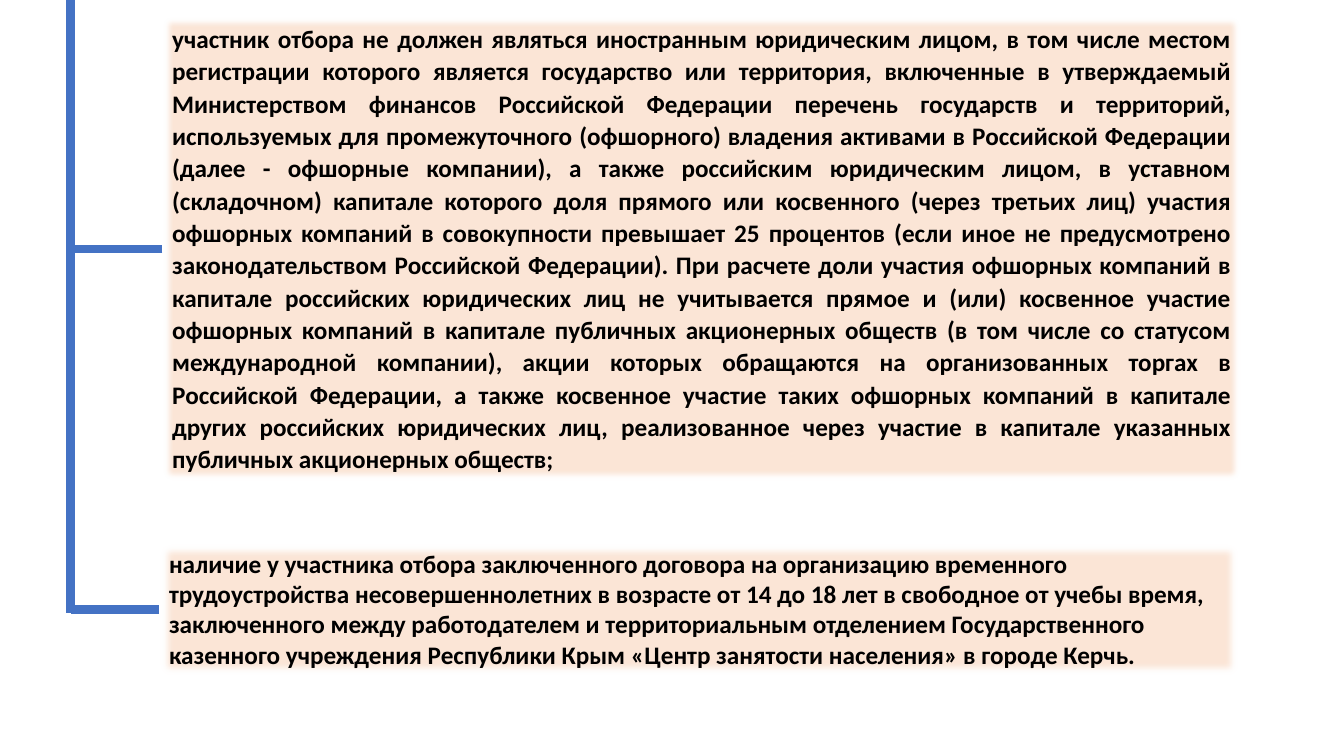
from dataclasses import dataclass

from lxml.etree import SubElement
from pptx import Presentation
from pptx.dml.color import RGBColor
from pptx.enum.shapes import MSO_CONNECTOR as CONNECTOR
from pptx.enum.text import MSO_AUTO_SIZE as AUTO_SIZE, PP_ALIGN as ALIGN
from pptx.oxml.ns import qn
from pptx.util import Cm, Pt


@dataclass(frozen=True)
class Theme:
    line: RGBColor = RGBColor(0x44, 0x72, 0xC4)
    panel: RGBColor = RGBColor(0xFB, 0xE5, 0xD6)
    text: RGBColor = RGBColor(0, 0, 0)
    font: str = "Calibri"
    size: Pt = Pt(18)
    line_width: Pt = Pt(6)
    soft_edge: Pt = Pt(5)


THEME = Theme()
TRUNK_X = Cm(1.78)
PANEL_WIDTH = Cm(27.2)

# Sentences of each rule, joined with a space
OFFSHORE_RULE = (
    "участник отбора не должен являться иностранным юридическим лицом, в том числе "
    "местом регистрации которого является государство или территория, включенные в "
    "утверждаемый Министерством финансов Российской Федерации перечень государств и "
    "территорий, используемых для промежуточного (офшорного) владения активами в "
    "Российской Федерации (далее - офшорные компании), а также российским юридическим "
    "лицом, в уставном (складочном) капитале которого доля прямого или косвенного "
    "(через третьих лиц) участия офшорных компаний в совокупности превышает 25 "
    "процентов (если иное не предусмотрено законодательством Российской Федерации).",
    "При расчете доли участия офшорных компаний в капитале российских юридических лиц "
    "не учитывается прямое и (или) косвенное участие офшорных компаний в капитале "
    "публичных акционерных обществ (в том числе со статусом международной компании), "
    "акции которых обращаются на организованных торгах в Российской Федерации, а также "
    "косвенное участие таких офшорных компаний в капитале других российских юридических "
    "лиц, реализованное через участие в капитале указанных публичных акционерных обществ;",
)
CONTRACT_RULE = (
    "наличие у участника отбора заключенного договора на организацию временного "
    "трудоустройства несовершеннолетних в возрасте от 14 до 18 лет в свободное от учебы "
    "время, заключенного между работодателем и территориальным отделением "
    "Государственного казенного учреждения Республики Крым «Центр занятости населения» "
    "в городе Керчь.",
)


def add_line(s, x1, y1, x2, y2):
    line = s.shapes.add_connector(CONNECTOR.STRAIGHT, x1, y1, x2, y2)
    line.line.color.rgb = THEME.line
    line.line.width = THEME.line_width
    SubElement(line._element.spPr, qn("a:effectLst"))
    return line


def add_panel(s, left, top, height, sentences):
    """Add a soft-edged text panel; return it with its paragraph."""
    panel = s.shapes.add_textbox(left, top, PANEL_WIDTH, height)
    panel.fill.solid()
    panel.fill.fore_color.rgb = THEME.panel
    effects = SubElement(panel._element.spPr, qn("a:effectLst"))
    SubElement(effects, qn("a:softEdge"), rad=str(int(THEME.soft_edge)))

    tf = panel.text_frame
    tf.word_wrap = True
    tf.auto_size = AUTO_SIZE.SHAPE_TO_FIT_TEXT
    p = tf.paragraphs[0]
    p.text = " ".join(sentences)
    p.font.name = THEME.font
    p.font.size = THEME.size
    p.font.bold = True
    p.font.color.rgb = THEME.text
    return panel, p


def add_branch(s, panel):
    """Join the middle of the panel's left side to the trunk."""
    y = panel.top + panel.height // 2
    branch = add_line(s, panel.left, y, TRUNK_X, y)
    branch.begin_connect(panel, 1)


def main():
    prs = Presentation()
    prs.slide_width, prs.slide_height = Cm(33.87), Cm(19.05)
    s = prs.slides.add_slide(prs.slide_layouts[6])

    add_line(s, TRUNK_X, Cm(-0.08), TRUNK_X, Cm(15.44))
    offshore, p = add_panel(s, Cm(4.09), Cm(0.41), Cm(11.73), OFFSHORE_RULE)
    p.alignment = ALIGN.JUSTIFY
    p.line_spacing = 1.07
    p.space_after = Pt(8)
    contract, _ = add_panel(s, Cm(4.01), Cm(13.69), Cm(3.33), CONTRACT_RULE)
    for panel in (offshore, contract):
        add_branch(s, panel)

    prs.save("out.pptx")


if __name__ == "__main__":
    main()
